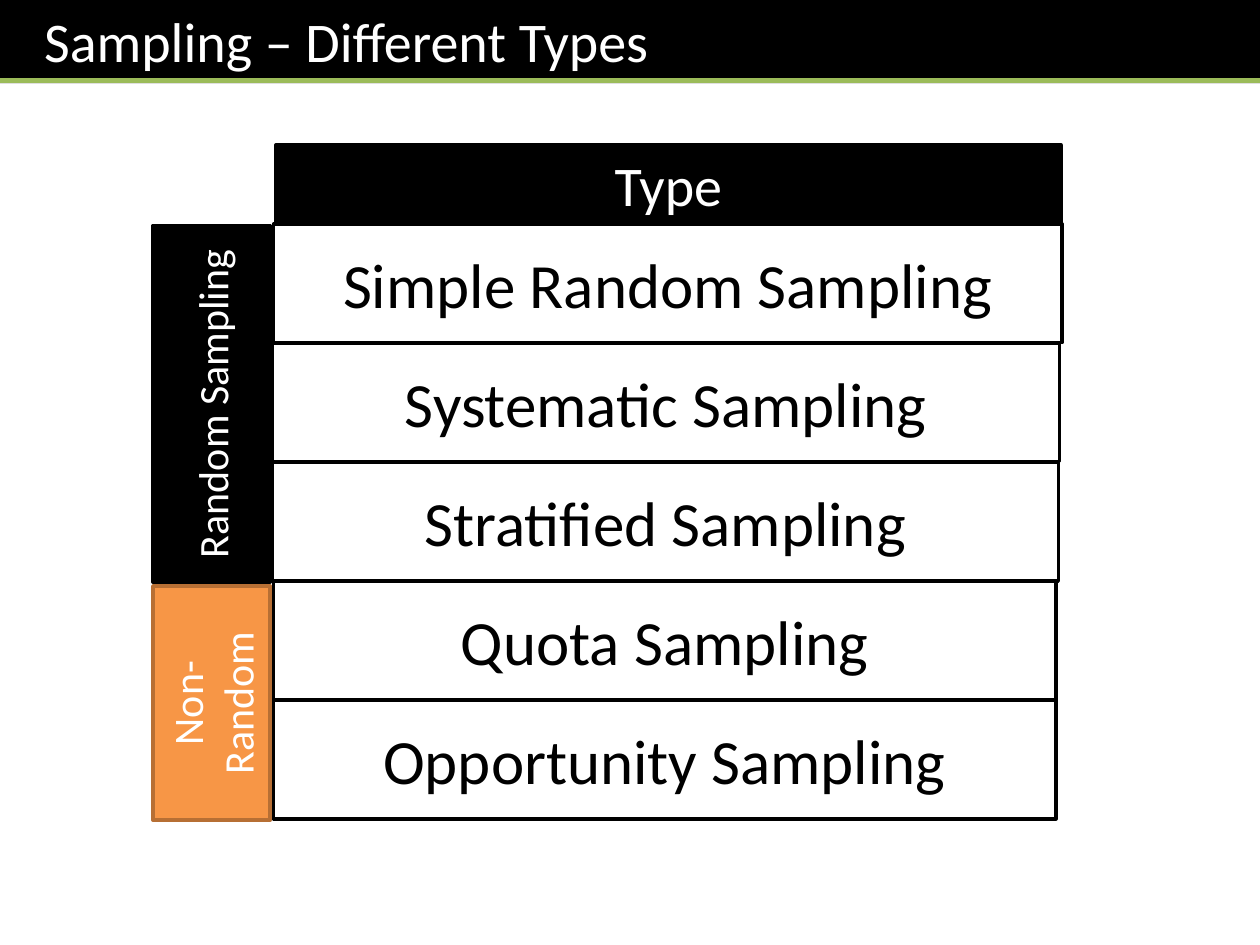
from lxml import etree
from pptx import Presentation
from pptx.dml.color import RGBColor
from pptx.enum.shapes import MSO_CONNECTOR, MSO_SHAPE
from pptx.enum.text import MSO_ANCHOR, PP_ALIGN
from pptx.oxml.ns import qn
from pptx.util import Inches, Pt

RECT, STRAIGHT = MSO_SHAPE.RECTANGLE, MSO_CONNECTOR.STRAIGHT
TOP, MIDDLE = MSO_ANCHOR.TOP, MSO_ANCHOR.MIDDLE
LEFT, CENTER = PP_ALIGN.LEFT, PP_ALIGN.CENTER
BLACK, WHITE, GREEN = "000000", "FFFFFF", "9BBB59"
ORANGE, BROWN = "F79646", "B76F34"

# Content
TITLE = "Sampling – Different Types"
HEADER = "Type"
TYPES = [  # name, left, width
    ("Simple Random Sampling", 2.17, 6.26),
    ("Systematic Sampling", 2.16, 6.25),
    ("Stratified Sampling", 2.16, 6.24),
    ("Quota Sampling", 2.17, 6.21),
    ("Opportunity Sampling", 2.17, 6.21),
]
GROUPS = [  # name, top, height as seen, fill, line
    ("Random Sampling", 1.79, 2.83, BLACK, BLACK),
    ("Non-Random", 4.65, 1.86, ORANGE, BROWN),
]
ROW_TOP, ROW_STEP, ROW_HEIGHT = 1.78, 0.945, 0.94
GROUP_CENTER, GROUP_WIDTH = 1.68, 0.93


def rgb(value):
    return RGBColor.from_string(value)


def add_box(text, left, top, width, height, fill, color, size,
            line=BLACK, align=CENTER, anchor=MIDDLE, inset=0.1):
    sp = s.shapes.add_shape(RECT, *map(Inches, (left, top, width, height)))
    sp.shadow.inherit = False
    sp.fill.solid()
    sp.fill.fore_color.rgb = rgb(fill)
    if line:
        sp.line.color.rgb = rgb(line)
        sp.line.width = Pt(2)
    else:
        sp.line.fill.background()
    tf = sp.text_frame
    frame_format = {"word_wrap": True, "vertical_anchor": anchor,
                    "margin_left": Inches(inset)}
    for name, value in frame_format.items():
        setattr(tf, name, value)
    p = tf.paragraphs[0]
    p.alignment = align
    r = p.add_run()
    r.text = text
    for name, value in {"name": "Calibri", "size": Pt(size)}.items():
        setattr(r.font, name, value)
    r.font.color.rgb = rgb(color)
    return sp


prs = Presentation()
prs.slide_width, prs.slide_height = Inches(10), Inches(7.5)
s = prs.slides.add_slide(prs.slide_layouts[6])

# Title bar with its green rule
add_box(TITLE, 0, 0, 10, 0.66, BLACK, WHITE, 32,
        line=None, align=LEFT, anchor=TOP, inset=0.35)
rule = s.shapes.add_connector(STRAIGHT, 0, Inches(0.64), Inches(10), Inches(0.64))
rule.line.color.rgb = rgb(GREEN)
rule.line.width = Pt(3)
etree.SubElement(rule._element.spPr, qn("a:effectLst"))

# Header and the stacked sampling types
add_box(HEADER, 2.19, 1.15, 6.23, 0.63, BLACK, WHITE, 32)
for i, (name, left, width) in enumerate(TYPES):
    add_box(name, left, ROW_TOP + i * ROW_STEP, width, ROW_HEIGHT, WHITE, BLACK, 36)

# Group labels, turned to read upwards about their centres
for name, top, height, fill, line in GROUPS:
    middle = top + height / 2
    label = add_box(name, GROUP_CENTER - height / 2, middle - GROUP_WIDTH / 2,
                    height, GROUP_WIDTH, fill, WHITE, 24, line=line)
    label.rotation = 270

prs.save("out.pptx")
